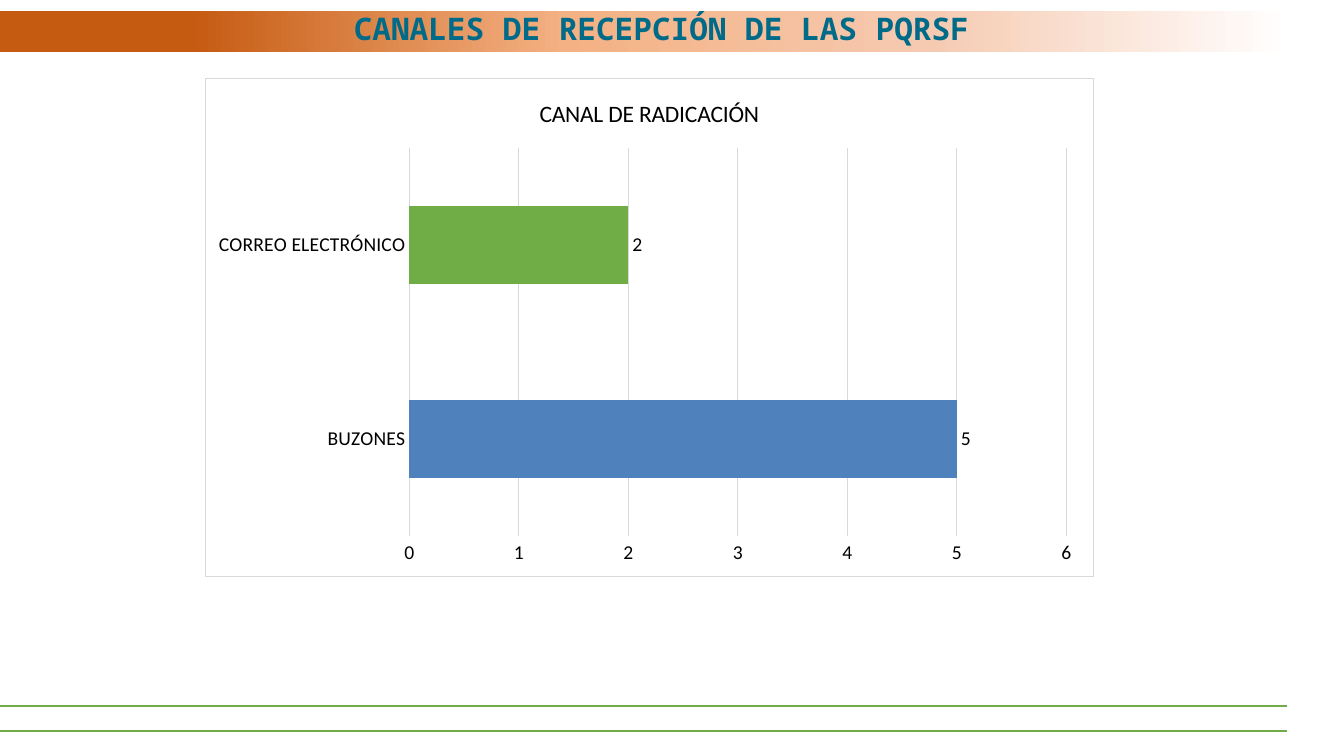
from lxml import etree
from pptx import Presentation
from pptx.chart.data import CategoryChartData
from pptx.dml.color import RGBColor
from pptx.enum.chart import XL_CHART_TYPE as Kind, XL_LABEL_POSITION as Spot, XL_TICK_MARK as Tick
from pptx.enum.shapes import MSO_CONNECTOR as Conn, MSO_SHAPE as Shape
from pptx.enum.text import MSO_ANCHOR as Anchor, PP_ALIGN as Align
from pptx.oxml import parse_xml
from pptx.oxml.ns import nsdecls, qn
from pptx.util import Cm, Pt

WIDE, HIGH = 33.87, 19.05
GREEN, GREY = "70AD47", "D9D9D9"
STOPS = [(14, "C55A11"), (42, "F4B183"), (69, "F6CAB1"), (96, "FFFFFF")]


def color(code):
    return RGBColor.from_string(code)


def style(font, name, size, code, bold=False):
    font.name, font.size, font.bold = name, Pt(size), bold
    font.color.rgb = color(code)


def banner(slide, x, y, w, h):
    """Gradient band across the box with the heading centred on it."""
    band = slide.shapes.add_shape(Shape.RECTANGLE, Cm(x), Cm(y), Cm(w), Cm(h))
    band.shadow.inherit = False
    band.line.fill.background()
    band.fill.gradient()
    band.fill.gradient_angle = 0
    stops = band.fill._fill._gradFill.find(qn("a:gsLst"))
    for old in list(stops):
        stops.remove(old)
    for at, code in STOPS:
        stop = etree.SubElement(stops, qn("a:gs"), pos=str(at * 1000))
        etree.SubElement(stop, qn("a:srgbClr"), val=code)

    side = 1.08
    head = slide.shapes.add_textbox(Cm(x + side), Cm(y), Cm(w - 2 * side - 0.06), Cm(h))
    frame = head.text_frame
    frame.word_wrap = True
    frame.vertical_anchor = Anchor.MIDDLE
    frame.margin_top = frame.margin_bottom = 0
    frame.text = "CANALES DE RECEPCIÓN DE LAS PQRSF "
    para = frame.paragraphs[0]
    para.alignment, para.line_spacing = Align.CENTER, 0.8
    style(para.runs[0].font, "Noto Sans Mono", 22.2, "006B89", True)


def canals(slide, x, y, w, h):
    """Bar chart of the reception channels."""
    data = CategoryChartData()
    data.categories = ["BUZONES", "CORREO ELECTRÓNICO"]
    data.add_series("Series 1", [5, 2])
    chart = slide.shapes.add_chart(
        Kind.BAR_CLUSTERED, Cm(x), Cm(y), Cm(w), Cm(h), data).chart
    style(chart.font, "Calibri", 14, "000000")
    chart.has_legend = False
    chart.has_title = True
    title = chart.chart_title
    title.include_in_layout = False
    title.text_frame.text = "CANAL DE RADICACIÓN"
    style(title.text_frame.paragraphs[0].runs[0].font, "Calibri", 16.8, "000000")

    for axis in (chart.category_axis, chart.value_axis):
        axis.major_tick_mark = axis.minor_tick_mark = Tick.NONE
        axis.format.line.fill.background()
    scale = chart.value_axis
    scale.minimum_scale, scale.maximum_scale, scale.major_unit = 0, 6, 1
    scale.has_major_gridlines = True
    grid = scale.major_gridlines.format.line
    grid.color.rgb, grid.width = color(GREY), Pt(0.75)

    plot = chart.plots[0]
    plot.gap_width, plot.vary_by_categories = 150, False
    bars = plot.series[0]
    for fill, code in ((bars.format.fill, "4F81BD"), (bars.points[1].format.fill, GREEN)):
        fill.solid()
        fill.fore_color.rgb = color(code)
    plot.has_data_labels = True
    tags = plot.data_labels
    tags.show_value, tags.position = True, Spot.OUTSIDE_END
    style(tags.font, "Calibri", 14, "000000")
    place(chart, x=0.23, y=0.14, w=0.74, h=0.78)
    frame(chart)


def place(chart, **box):
    """Set the inner plot area as shares of the chart."""
    area = chart._chartSpace.chart.plotArea
    for old in area.findall(qn("c:layout")):
        area.remove(old)
    lay = etree.Element(qn("c:layout"))
    area.insert(0, lay)
    man = etree.SubElement(lay, qn("c:manualLayout"))
    for tag, val in (("layoutTarget", "inner"), ("xMode", "edge"), ("yMode", "edge"), *box.items()):
        etree.SubElement(man, qn("c:" + tag), val=str(val))


def frame(chart):
    """Give the chart a white ground and a thin border."""
    chart._chartSpace.chart.addnext(parse_xml(
        f'<c:spPr {nsdecls("c", "a")}>'
        '<a:solidFill><a:srgbClr val="FFFFFF"/></a:solidFill>'
        f'<a:ln w="{Pt(0.75)}"><a:solidFill><a:srgbClr val="{GREY}"/></a:solidFill></a:ln>'
        '</c:spPr>'))


def footer(slide, x, y, w, h):
    """Green rules along the top and bottom of the box."""
    for level in (y, y + h):
        rule = slide.shapes.add_connector(
            Conn.STRAIGHT, Cm(x + w), Cm(level), Cm(x), Cm(level))
        rule.line.color.rgb, rule.line.width = color(GREEN), Pt(1.5)
        etree.SubElement(rule._element.spPr, qn("a:effectLst"))


def main():
    deck = Presentation()
    deck.slide_width, deck.slide_height = Cm(WIDE), Cm(HIGH)
    slide = deck.slides.add_slide(deck.slide_layouts[6])
    footer(slide, 0, 17.8, 32.44, 0.62)
    banner(slide, 0, 0.28, WIDE, 1.02)
    canals(slide, 5.16, 1.96, 22.4, 12.57)
    deck.save("out.pptx")


if __name__ == "__main__":
    main()
